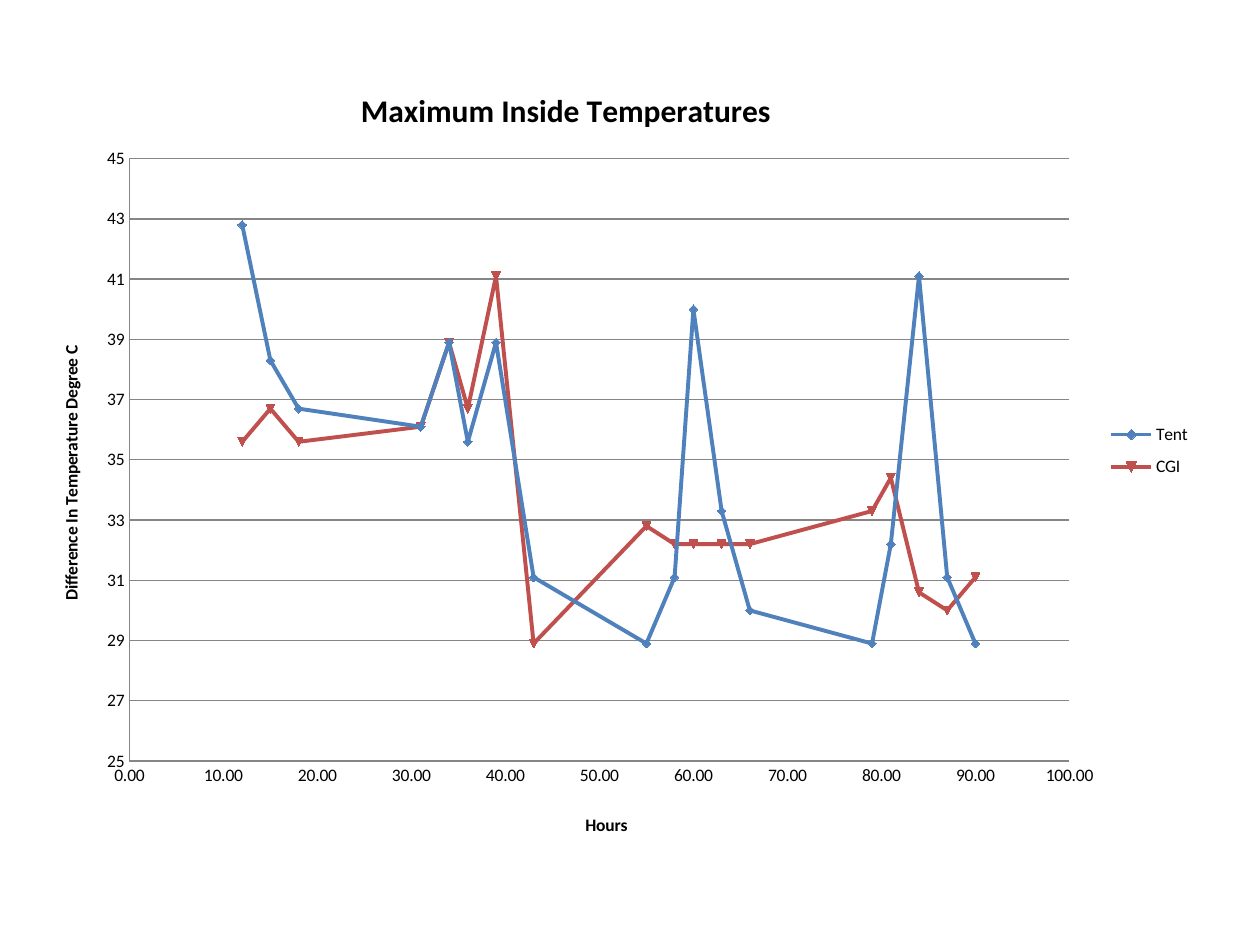
import pptx
import pptx.chart.data
import pptx.dml.color
import pptx.enum.chart
import pptx.oxml
import pptx.oxml.ns
import pptx.util
from dataclasses import dataclass

Pt = pptx.util.Pt
qn = pptx.oxml.ns.qn
COLORS = {"text": "000000", "grid": "868686", "tent": "4F81BD", "cgi": "C0504D"}
HOURS = [12, 15, 18, 31, 34, 36, 39, 43, 55, 58, 60, 63, 66, 79, 81, 84, 87, 90]


@dataclass
class Shelter:
    name: str
    color: str
    temperatures: list[float]


@dataclass
class Axis:
    title: str
    low: float
    high: float
    step: float
    number_format: str
    x: float
    y: float


SHELTERS = [
    Shelter("Tent", "tent", [42.8, 38.3, 36.7, 36.1, 38.9, 35.6, 38.9, 31.1, 28.9,
                             31.1, 40, 33.3, 30, 28.9, 32.2, 41.1, 31.1, 28.9]),
    Shelter("CGI", "cgi", [35.6, 36.7, 35.6, 36.1, 38.9, 36.7, 41.1, 28.9, 32.8,
                           32.2, 32.2, 32.2, 32.2, 33.3, 34.4, 30.6, 30, 31.1]),
]
HOURS_AXIS = Axis("Hours", 0, 100, 10, "#,##0.00", 0.46, 0.89)
TEMPERATURE_AXIS = Axis("Difference In Temperature Degree C", 25, 45, 2, "General", 0.02, 0.35)


def rgb(name: str) -> pptx.dml.color.RGBColor:
    return pptx.dml.color.RGBColor.from_string(COLORS[name])


def place(parent, after: str, inner: bool = False, **fractions: float) -> None:
    for old in parent.findall(qn("c:layout")):
        parent.remove(old)
    modes = {"xMode": "edge", "yMode": "edge"}
    target = {"layoutTarget": "inner"} if inner else {}
    parts = "".join(f'<c:{k} val="{v}"/>' for k, v in {**target, **modes, **fractions}.items())
    layout = pptx.oxml.parse_xml(
        f'<c:layout {pptx.oxml.ns.nsdecls("c")}><c:manualLayout>{parts}</c:manualLayout></c:layout>')
    anchor = parent.find(qn(after)) if after else None
    if anchor is None:
        parent.insert(0, layout)
    else:
        anchor.addnext(layout)


def write_title(title, text: str, size: float, x: float, y: float) -> None:
    tf = title.text_frame
    tf.text = text
    font = tf.paragraphs[0].font
    font.name, font.size, font.bold = "Calibri", Pt(size), True
    font.color.rgb = rgb("text")
    place(title._element, "c:tx", x=x, y=y)


def format_axis(axis, config: Axis) -> None:
    axis.minimum_scale, axis.maximum_scale = config.low, config.high
    axis.major_unit = config.step
    axis.major_tick_mark = axis.minor_tick_mark = pptx.enum.chart.XL_TICK_MARK.NONE
    axis.tick_labels.number_format = config.number_format
    axis.tick_labels.number_format_is_linked = False
    axis.format.line.color.rgb = rgb("grid")
    axis.format.line.width = Pt(0.75)
    write_title(axis.axis_title, config.title, 10, config.x, config.y)


def format_series(series, shelter: Shelter, index: int) -> None:
    series.smooth = True
    series._element.find(qn("c:idx")).set("val", str(index))
    series.format.line.color.rgb = rgb(shelter.color)
    series.format.line.width = Pt(2.25)
    marker = series.marker.format
    marker.fill.solid()
    marker.fill.fore_color.rgb = rgb(shelter.color)
    marker.line.color.rgb = rgb(shelter.color)


def add_temperature_chart(s) -> None:
    data = pptx.chart.data.XyChartData()
    for shelter in SHELTERS:
        points = data.add_series(shelter.name)
        for hour, temperature in zip(HOURS, shelter.temperatures):
            points.add_data_point(hour, temperature)
    chart = s.shapes.add_chart(pptx.enum.chart.XL_CHART_TYPE.XY_SCATTER_SMOOTH,
                               Pt(18.7), Pt(22.3), Pt(682.6), Pt(495.4), data).chart
    chart.font.name, chart.font.size = "Calibri", Pt(10)
    chart.font.color.rgb = rgb("text")
    write_title(chart.chart_title, "Maximum Inside Temperatures", 18, 0.27, 0.05)
    chart.plots[0].vary_by_categories = False
    place(chart._chartSpace.chart.plotArea, "", inner=True, x=0.081, y=0.138, w=0.787, h=0.695)

    format_axis(chart.category_axis, HOURS_AXIS)
    format_axis(chart.value_axis, TEMPERATURE_AXIS)
    chart.category_axis.has_major_gridlines = False
    gridlines = chart.value_axis.major_gridlines.format.line
    gridlines.color.rgb = rgb("grid")
    gridlines.width = Pt(0.75)

    chart.has_legend = True
    chart.legend.position = pptx.enum.chart.XL_LEGEND_POSITION.RIGHT
    chart.legend.include_in_layout = False
    place(chart.legend._element, "c:legendPos", x=0.89, y=0.43, w=0.09, h=0.09)
    for index, (series, shelter) in enumerate(zip(chart.plots[0].series, SHELTERS), start=1):
        format_series(series, shelter, index)


def main() -> None:
    prs = pptx.Presentation()
    prs.slide_width, prs.slide_height = Pt(720), Pt(540)
    s = prs.slides.add_slide(prs.slide_layouts[6])
    add_temperature_chart(s)
    prs.save("out.pptx")


if __name__ == "__main__":
    main()
